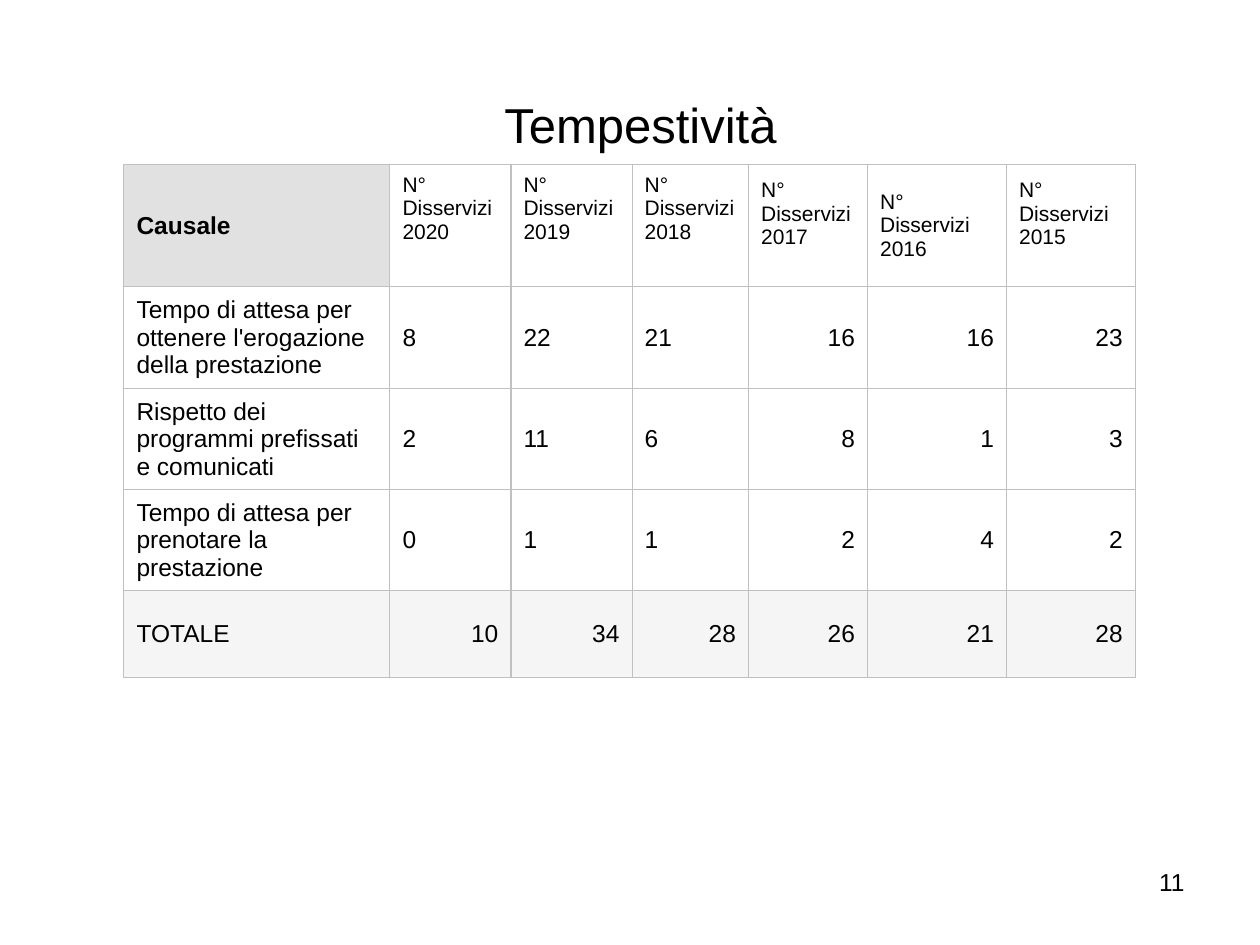
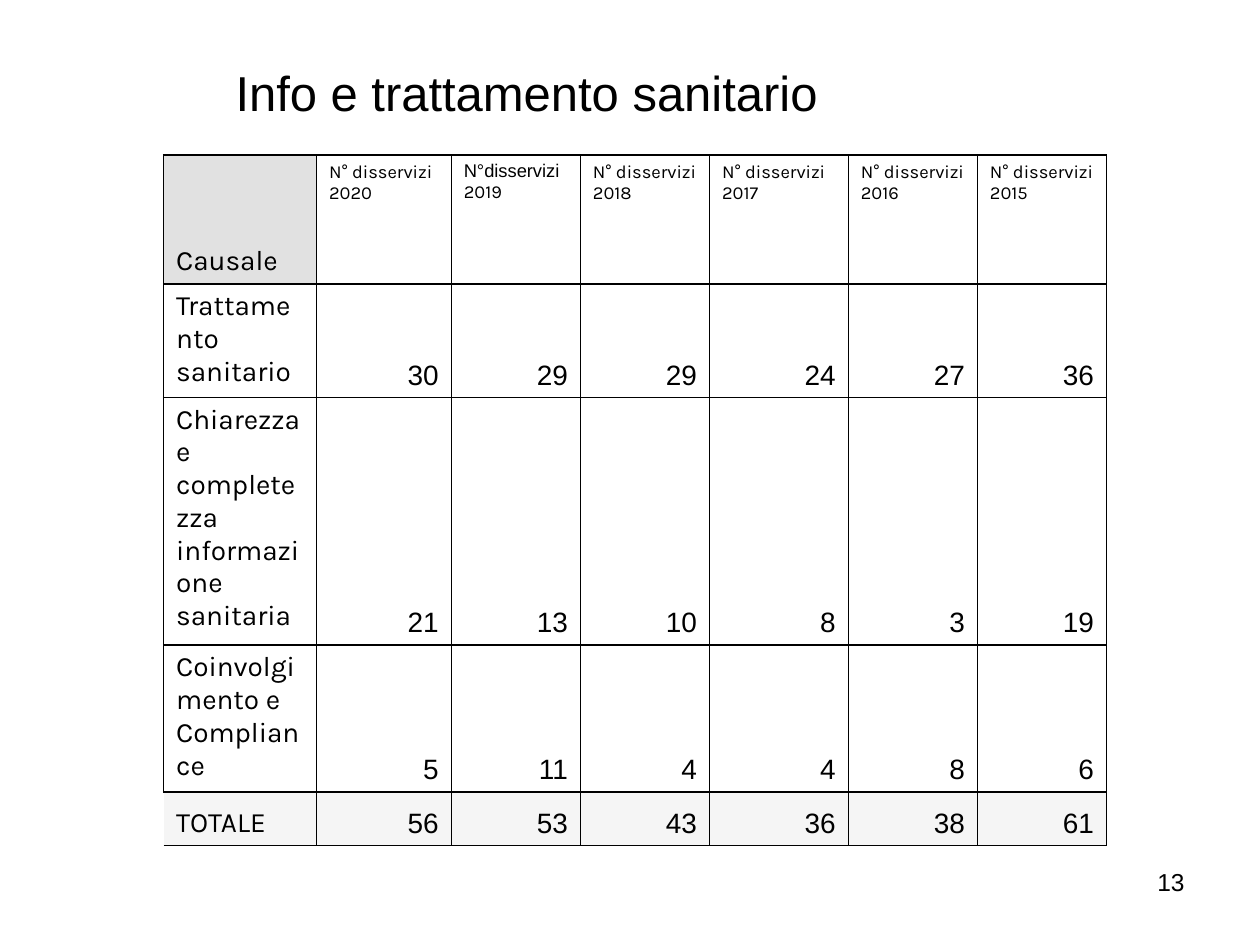
from lxml import etree
from pptx import Presentation
from pptx import util as u
from pptx.dml.color import RGBColor
from pptx.enum import text
from pptx.oxml import ns

BLACK = RGBColor(0x00, 0x00, 0x00)
WHITE = RGBColor(0xFF, 0xFF, 0xFF)
SILVER = RGBColor(0xC0, 0xC0, 0xC0)
HEADER_GREY = RGBColor(0xE1, 0xE1, 0xE1)
TOTAL_GREY = RGBColor(0xF5, 0xF5, 0xF5)
LEFT, CENTER, RIGHT = text.PP_ALIGN.LEFT, text.PP_ALIGN.CENTER, text.PP_ALIGN.RIGHT
TOP, MIDDLE, BOTTOM = text.MSO_ANCHOR.TOP, text.MSO_ANCHOR.MIDDLE, text.MSO_ANCHOR.BOTTOM
YEARS = range(2020, 2014, -1)


class Deck:
    """Builds the complaint-report slides in one shared style."""

    def __init__(self):
        self.presentation = Presentation()
        self.presentation.slide_width = u.Pt(720)
        self.presentation.slide_height = u.Pt(540)
        self.slide = None

    def add_slide(self, number):
        self.slide = self.presentation.slides.add_slide(self.presentation.slide_layouts[5])
        box = self.slide.shapes.add_textbox(u.Pt(516.5), u.Pt(492), u.Pt(167.5), u.Pt(37.5))
        box.text_frame.word_wrap = True
        self.set_text(box.text_frame, str(number), 14, align=RIGHT)

    def set_text(self, frame, words, size, font="Arial", align=LEFT, bold=False):
        frame.text = words
        for paragraph in frame.paragraphs:
            paragraph.alignment = align
            paragraph.font.size = u.Pt(size)
            paragraph.font.name = font
            paragraph.font.bold = bold
            paragraph.font.color.rgb = BLACK

    def title(self, words, left, top, width, height, align=LEFT):
        shape = self.slide.shapes.title
        shape.left, shape.top = u.Pt(left), u.Pt(top)
        shape.width, shape.height = u.Pt(width), u.Pt(height)
        frame = shape.text_frame
        frame.auto_size = text.MSO_AUTO_SIZE.NONE
        frame.vertical_anchor = MIDDLE
        self.set_text(frame, words, 28, align=align)

    def table(self, left, top, widths, heights):
        frame = self.slide.shapes.add_table(
            len(heights), len(widths), u.Pt(left), u.Pt(top),
            u.Pt(sum(widths)), u.Pt(sum(heights)))
        table = frame.table
        table.first_row = table.horz_banding = False
        for column, width in zip(table.columns, widths):
            column.width = u.Pt(width)
        for row, height in zip(table.rows, heights):
            row.height = u.Pt(height)
        return table

    def cell(self, cell, words, size, anchor, fill, border, **style):
        color, line_width, sides = border
        properties = cell._tc.get_or_add_tcPr()
        for side in "LRTB":
            line = etree.SubElement(properties, ns.qn(f"a:ln{side}"), w=str(u.Pt(line_width)))
            if side in sides:
                solid = etree.SubElement(line, ns.qn("a:solidFill"))
                etree.SubElement(solid, ns.qn("a:srgbClr"), val=str(color))
            else:
                etree.SubElement(line, ns.qn("a:noFill"))
        cell.fill.solid()
        cell.fill.fore_color.rgb = fill
        cell.vertical_anchor = anchor
        self.set_text(cell.text_frame, words, size, **style)


def cell_fill(row, column, last_row):
    if row == last_row:
        return TOTAL_GREY
    return HEADER_GREY if row == column == 0 else WHITE


def with_header(label, rows):
    return [["Causale"] + [f"{label}\n{year}" for year in YEARS]] + rows


def timeliness_slide(deck):
    deck.add_slide(11)
    deck.title("Tempestività", 54, 49, 624, 44, CENTER)
    rows = with_header("N° Disservizi", [
        ["Tempo di attesa per ottenere l'erogazione della prestazione", 8, 22, 21, 16, 16, 23],
        ["Rispetto dei programmi prefissati e comunicati", 2, 11, 6, 8, 1, 3],
        ["Tempo di attesa per prenotare la prestazione", 0, 1, 1, 2, 4, 2],
        ["TOTALE", 10, 34, 28, 26, 21, 28],
    ])
    table = deck.table(70.8, 94, [152, 69.2, 69.2, 66.6, 68, 79.4, 73.6],
                       [68, 58.3, 54.3, 54.3, 49.7])
    last = len(rows) - 1
    for r, row in enumerate(rows):
        for c, value in enumerate(row):
            header = r == 0 and c > 0
            number_right = (r > 0 and c > 3) or (r == last and c > 0)
            deck.cell(table.cell(r, c), str(value), 12 if header else 14, MIDDLE,
                      cell_fill(r, c, last), (SILVER, 0.75, "LRTB"),
                      align=RIGHT if number_right else LEFT, bold=r == c == 0)
    for c, bottom in {1: 23, 2: 23, 3: 23, 4: 17, 6: 17}.items():
        table.cell(0, c).margin_bottom = u.Pt(bottom)


def treatment_slide(deck):
    deck.add_slide(13)
    deck.title("Info e trattamento sanitario", 127.4, 32, 442, 41)
    rows = with_header("N° disservizi", [
        ["Trattamento sanitario", 30, 29, 29, 24, 27, 36],
        ["Chiarezza e completezza informazione sanitaria", 21, 13, 10, 8, 3, 19],
        ["Coinvolgimento e Compliance", 5, 11, 4, 4, 8, 6],
        ["TOTALE", 56, 53, 43, 36, 38, 61],
    ])
    table = deck.table(93.5, 88.6, [87.4, 77, 73.8, 73.8, 79.3, 73.8, 73.8],
                       [73.6, 63.4, 138.2, 82, 30.6])
    last = len(rows) - 1
    for r, row in enumerate(rows):
        for c, value in enumerate(row):
            header = r == 0 and c > 0
            number = r > 0 and c > 0
            label = 0 < r < last and c == 0
            deck.cell(table.cell(r, c), str(value), 10.5 if header else 16,
                      TOP if header or label else BOTTOM, cell_fill(r, c, last),
                      (BLACK, 1, "RTB" if r == last and c == 0 else "LRTB"),
                      font="Arial" if number else "Karla", align=RIGHT if number else LEFT)
    header_2019 = table.cell(0, 2).text_frame.paragraphs[0]
    header_2019.runs[0].text = "N°disservizi"
    header_2019.font.name = "Arial"


def main():
    deck = Deck()
    timeliness_slide(deck)
    treatment_slide(deck)
    deck.presentation.save("out.pptx")


if __name__ == "__main__":
    main()
